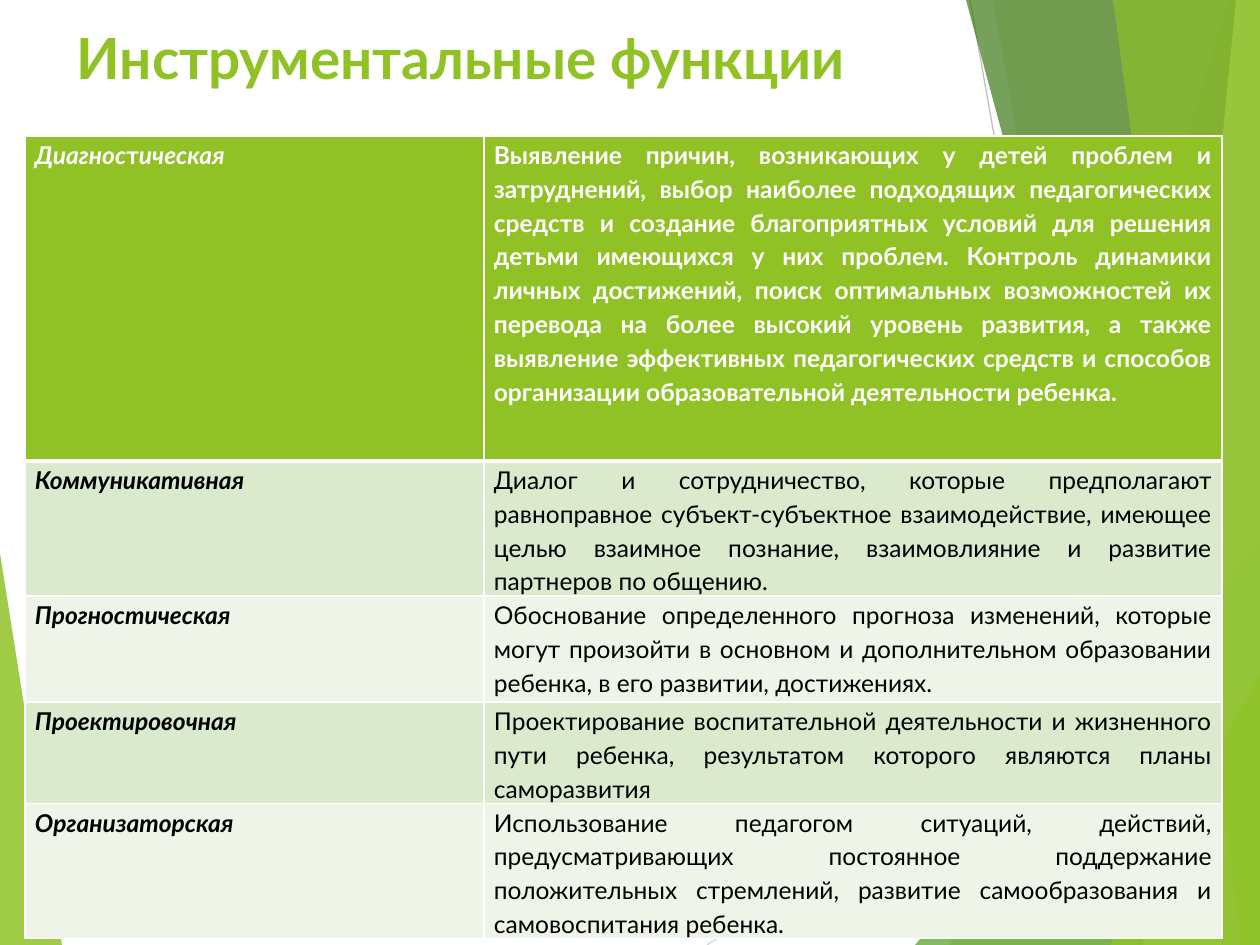
from lxml.etree import SubElement
from pptx import Presentation
from pptx.dml.color import RGBColor
from pptx.enum.shapes import MSO_CONNECTOR
from pptx.enum.text import MSO_ANCHOR, MSO_AUTO_SIZE, PP_ALIGN
from pptx.oxml import parse_xml
from pptx.oxml.ns import nsdecls, qn
from pptx.util import Emu, Pt

PX = 914400 / 126
W, H = 1260, 945
FONT = "Lato"
COLORS = {
    "green": "90C226", "leaf": "54A021", "forest": "3F7819", "lime": "C0E474",
    "silver": "D9D9D9", "gray": "BFBFBF", "white": "FFFFFF", "black": "000000",
    "band": "DBE9CD", "pale": "EEF4E8",
}
TITLE = "Инструментальные функции"
ROWS = [
    (325, ["Диагнос", "т", "ическая"],
     "Выявление причин, возникающих у детей проблем и затруднений, выбор наиболее "
     "подходящих педагогических средств и создание благоприятных условий для решения "
     "детьми имеющихся у них проблем. Контроль динамики личных достижений, поиск "
     "оптимальных возможностей их перевода на более высокий уровень развития, а также "
     "выявление эффективных педагогических средств и способов организации "
     "образовательной деятельности ребенка."),
    (129, ["Коммуникативная"],
     "Диалог и сотрудничество, которые предполагают равноправное субъект-субъектное "
     "взаимодействие, имеющее целью взаимное познание, взаимовлияние и развитие "
     "партнеров по общению."),
    (106, ["Прогностическая"],
     "Обоснование определенного прогноза изменений, которые могут произойти в основном "
     "и дополнительном образовании ребенка, в его развитии, достижениях."),
    (96, ["Проектировочная"],
     "Проектирование воспитательной деятельности и жизненного пути ребенка, "
     "результатом которого являются планы саморазвития"),
    (129, ["Организаторская"],
     "Использование педагогом ситуаций, действий, предусматривающих постоянное "
     "поддержание положительных стремлений, развитие самообразования и "
     "самовоспитания ребенка."),
]


def px(n):
    """Convert pixels to EMU."""
    return Emu(round(n * PX))


def rgb(name):
    """Look up a named colour."""
    return RGBColor.from_string(COLORS[name])


def add_polygon(s, x, y, points, color, opacity):
    """Draw a translucent polygon with points relative to x, y."""
    points = [(x + a, y + b) for a, b in points]
    builder = s.shapes.build_freeform(*points[0], scale=PX)
    builder.add_line_segments(points[1:], close=True)
    sp = builder.convert_to_shape()
    sp.shadow.inherit = False
    sp.line.fill.background()
    sp.fill.solid()
    sp.fill.fore_color.rgb = rgb(color)
    clr = sp.element.spPr.find(qn("a:solidFill"))[0]
    SubElement(clr, qn("a:alpha"), val=str(opacity * 1000))


def add_line(s, x1, y1, x2, y2, color):
    """Draw a thin straight line."""
    line = s.shapes.add_connector(MSO_CONNECTOR.STRAIGHT, px(x1), px(y1), px(x2), px(y2))
    line.line.color.rgb = rgb(color)
    line.line.width = Pt(0.75)
    SubElement(line.element.spPr, qn("a:effectLst"))


def add_wedge(s, x, y, w, h):
    """Draw the green wedge at the left edge."""
    add_polygon(s, x, y, [(0, 0), (w, h), (0, h)], "green", 85)


def add_facets(s, x, y, w, h):
    """Draw the overlapping facets along the right edge."""
    def band(top, bottom):
        return [(top, 0), (bottom, h), (w, h), (w, 0)]

    def corner(left, top):
        return [(left, h), (w, top), (w, h)]

    add_line(s, x + 7, y + h, x + w, y + 576, "silver")
    add_line(s, x + 270, y, x + 439, y + h, "gray")
    for points, color, opacity in [
        (band(528, 250), "green", 30),
        (band(293, 458), "green", 20),
        (corner(215, 541), "leaf", 72),
        (band(266, 522), "forest", 70),
        (band(536, 443), "lime", 70),
        (band(413, 542), "green", 65),
        (corner(410, 674), "green", 80),
    ]:
        add_polygon(s, x, y, points, color, opacity)


def format_run(r, size, color, bold, italic=False):
    """Set the font of a run."""
    r.font.name = FONT
    r.font.size = Pt(size)
    r.font.bold = bold
    r.font.italic = italic
    r.font.color.rgb = rgb(color)


def add_title(s, x, y, w, h):
    """Place the title in front of the facets."""
    sp = s.shapes.title
    sp.left, sp.top, sp.width, sp.height = px(x), px(y), px(w), px(h)
    sp.element.getparent().append(sp.element)
    tf = sp.text_frame
    tf.text = TITLE
    tf.word_wrap = True
    tf.auto_size = MSO_AUTO_SIZE.NONE
    tf.vertical_anchor = MSO_ANCHOR.TOP
    p = tf.paragraphs[0]
    p.alignment = PP_ALIGN.LEFT
    format_run(p.runs[0], 32.4, "green", True)


def set_borders(cell, top, bottom):
    """Give a cell white borders, with top and bottom widths in points."""
    tc_pr = cell._tc.get_or_add_tcPr()
    for i, (side, width) in enumerate([("L", 1), ("R", 1), ("T", top), ("B", bottom)]):
        tc_pr.insert(i, parse_xml(
            f'<a:ln{side} {nsdecls("a")} w="{Pt(width)}"><a:solidFill>'
            f'<a:srgbClr val="{COLORS["white"]}"/></a:solidFill></a:ln{side}>'))


def fill_cell(cell, parts, fill, color, bold, italic):
    """Write justified text into a cell; alternate parts switch italics off."""
    cell.fill.solid()
    cell.fill.fore_color.rgb = rgb(fill)
    cell.margin_left = cell.margin_right = px(10)
    cell.margin_top = cell.margin_bottom = 0
    p = cell.text_frame.paragraphs[0]
    p.alignment = PP_ALIGN.JUSTIFY
    p.line_spacing = 1.15
    for i, part in enumerate(parts):
        r = p.add_run()
        r.text = part
        format_run(r, 14, color, bold, italic and i % 2 == 0)


def add_functions_table(s, x, y, w, h):
    """Place the table of functions and their descriptions."""
    table = s.shapes.add_table(len(ROWS), 2, px(x), px(y), px(w), px(h)).table
    label_w = 459
    table.columns[0].width = px(label_w)
    table.columns[1].width = px(w - label_w)
    for i, (row_h, label, text) in enumerate(ROWS):
        table.rows[i].height = px(row_h)
        head = i == 0
        fill = "green" if head else ("pale", "band")[i % 2]
        color = "white" if head else "black"
        fill_cell(table.cell(i, 0), label, fill, color, True, True)
        fill_cell(table.cell(i, 1), [text], fill, color, head, False)
        for cell in table.rows[i].cells:
            set_borders(cell, 3 if i == 1 else 1, 3 if head else 1)


def main():
    """Build and save the slide."""
    prs = Presentation()
    prs.slide_width, prs.slide_height = px(W), px(H)
    s = prs.slides.add_slide(prs.slide_layouts[5])
    add_wedge(s, 0, 553, 62, 392)
    add_facets(s, 700, 0, 560, H)
    add_title(s, 64, 16, 875, 181)
    add_functions_table(s, 25, 136, 1197, 805)
    prs.save("out.pptx")


if __name__ == "__main__":
    main()
